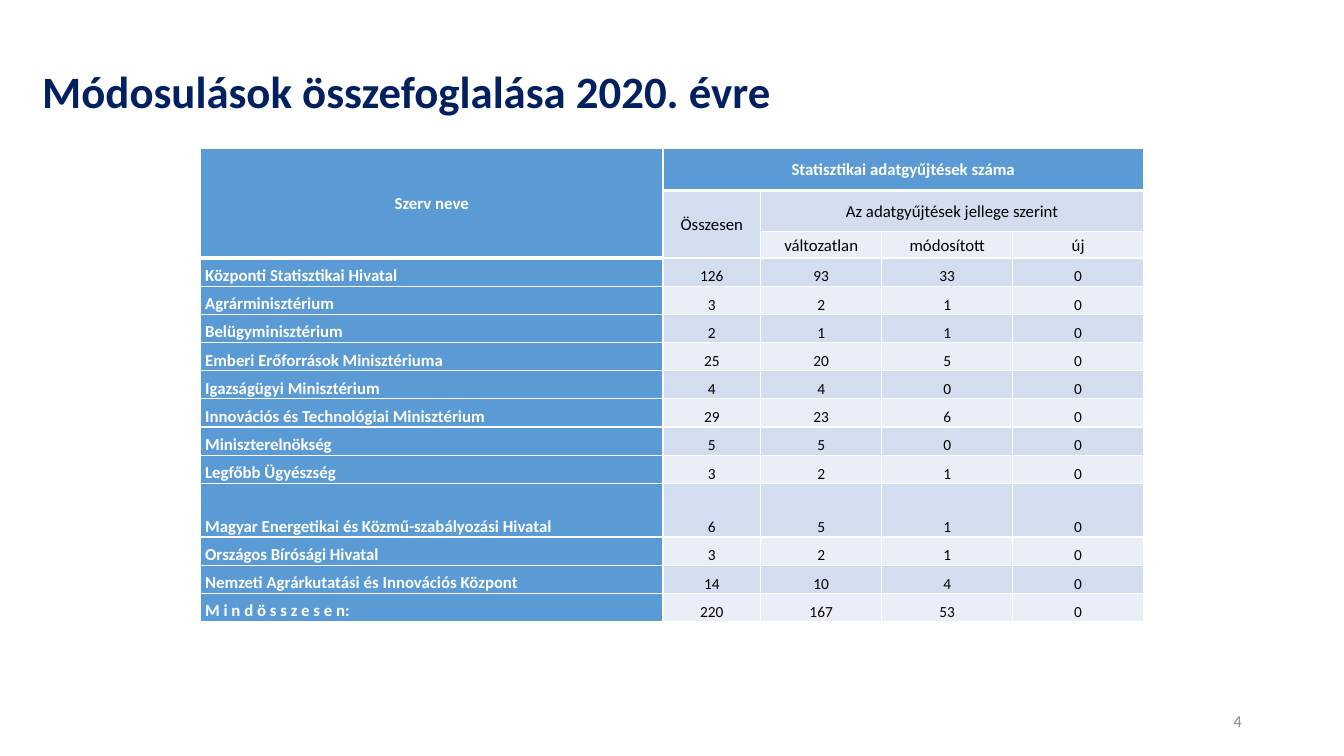
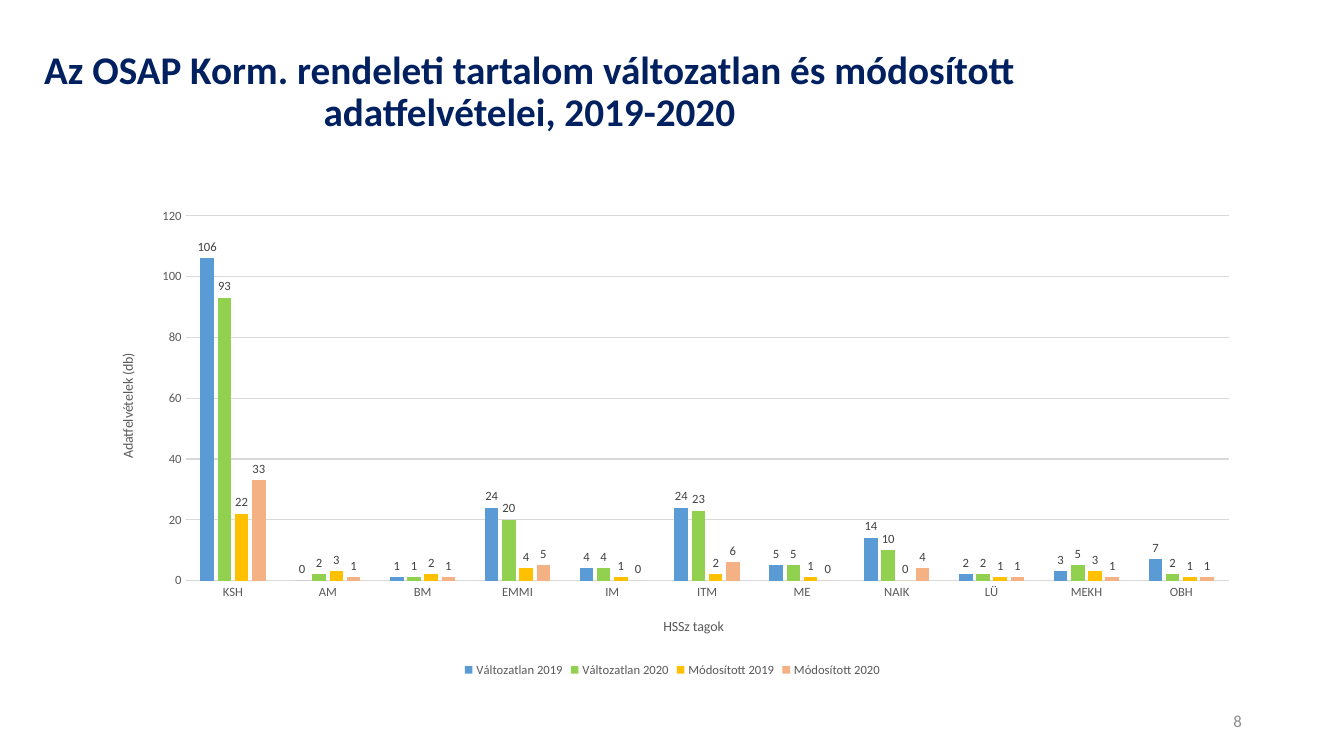
from typing import NamedTuple

from lxml import etree
from pptx import Presentation
from pptx.chart.data import CategoryChartData
from pptx.dml.color import RGBColor
from pptx.enum.chart import XL_CHART_TYPE, XL_LABEL_POSITION, XL_LEGEND_POSITION, XL_TICK_MARK
from pptx.enum.text import MSO_ANCHOR, MSO_AUTO_SIZE, PP_ALIGN
from pptx.oxml.ns import qn
from pptx.util import Cm, Pt

LEFT, CENTER, RIGHT = PP_ALIGN.LEFT, PP_ALIGN.CENTER, PP_ALIGN.RIGHT
MIDDLE, BOTTOM = MSO_ANCHOR.MIDDLE, MSO_ANCHOR.BOTTOM
NO_AUTOFIT = MSO_AUTO_SIZE.NONE
CLUSTERED = XL_CHART_TYPE.COLUMN_CLUSTERED
OUTSIDE_END = XL_LABEL_POSITION.OUTSIDE_END
LEGEND_BOTTOM = XL_LEGEND_POSITION.BOTTOM
NO_TICK = XL_TICK_MARK.NONE

FONT = "Calibri"
NAVY, WHITE, BLACK = "002060", "FFFFFF", "000000"
BLUE, BAND_DARK, BAND_LIGHT = "5B9BD5", "D2DEEF", "EAEFF7"
NUMBER_GREY, AXIS_GREY, LABEL_GREY, GRID_GREY = "8C8C8C", "595959", "404040", "D9D9D9"
TITLE_ONLY = 5


class Box(NamedTuple):
    """Left, top, width and height in centimetres."""
    left: float
    top: float
    width: float
    height: float

    def lengths(self):
        return [Cm(value) for value in self]


class HeaderCell(NamedTuple):
    row: int
    column: int
    text: str
    rows: int = 1
    columns: int = 1
    fill: str = BAND_DARK


class BodyRow(NamedTuple):
    organisation: str
    counts: tuple[int, int, int, int]
    height: float = 0.71


class Series(NamedTuple):
    name: str
    values: tuple[int, ...]
    color: str


NUMBER_BOX = Box(23.93, 17.65, 7.62, 1.02)
TABLE_LEFT, TABLE_TOP = 5.05, 3.73
COLUMN_WIDTHS = (11.66, 2.46, 3.05, 3.3, 3.3)
HEADER_HEIGHTS = (1.07, 1.04, 0.66)

HEADER = (
    HeaderCell(0, 0, "Szerv neve", rows=3, fill=BLUE),
    HeaderCell(0, 1, "Statisztikai adatgyűjtések száma", columns=4, fill=BLUE),
    HeaderCell(1, 1, "Összesen", rows=2),
    HeaderCell(1, 2, "Az adatgyűjtések jellege szerint", columns=3),
    HeaderCell(2, 2, "változatlan", fill=BAND_LIGHT),
    HeaderCell(2, 3, "módosított", fill=BAND_LIGHT),
    HeaderCell(2, 4, "új", fill=BAND_LIGHT),
)
BODY = (
    BodyRow("Központi Statisztikai Hivatal", (126, 93, 33, 0)),
    BodyRow("Agrárminisztérium", (3, 2, 1, 0)),
    BodyRow("Belügyminisztérium", (2, 1, 1, 0)),
    BodyRow("Emberi Erőforrások Minisztériuma", (25, 20, 5, 0)),
    BodyRow("Igazságügyi Minisztérium", (4, 4, 0, 0)),
    BodyRow("Innovációs és Technológiai Minisztérium", (29, 23, 6, 0)),
    BodyRow("Miniszterelnökség", (5, 5, 0, 0)),
    BodyRow("Legfőbb Ügyészség", (3, 2, 1, 0)),
    BodyRow("Magyar Energetikai és Közmű-szabályozási Hivatal", (6, 5, 1, 0), 1.35),
    BodyRow("Országos Bírósági Hivatal", (3, 2, 1, 0)),
    BodyRow("Nemzeti Agrárkutatási és Innovációs Központ", (14, 10, 4, 0)),
    BodyRow("M i n d ö s s z e s e n:", (220, 167, 53, 0)),
)

MEMBERS = ("KSH", "AM", "BM", "EMMI", "IM", "ITM", "ME", "NAIK", "LÜ", "MEKH", "OBH")
SURVEYS = (
    Series("Változatlan 2019", (106, 0, 1, 24, 4, 24, 5, 14, 2, 3, 7), BLUE),
    Series("Változatlan 2020", (93, 2, 1, 20, 4, 23, 5, 10, 2, 5, 2), "92D050"),
    Series("Módosított 2019", (22, 3, 2, 4, 1, 2, 1, 0, 1, 3, 1), "FFC000"),
    Series("Módosított 2020", (33, 1, 1, 5, 0, 6, 0, 4, 1, 1, 1), "F4B183"),
)


def rgb(color: str) -> RGBColor:
    return RGBColor.from_string(color)


def set_font(font, size: float, color: str, bold: bool = False) -> None:
    font.name, font.size, font.bold = FONT, Pt(size), bold
    font.color.rgb = rgb(color)


def add_titled_slide(prs, title: str, box: Box, size: float, align, number: int):
    slide = prs.slides.add_slide(prs.slide_layouts[TITLE_ONLY])
    heading = slide.shapes.title
    heading.left, heading.top, heading.width, heading.height = box.lengths()
    number_box = slide.shapes.add_textbox(*NUMBER_BOX.lengths())
    for shape, text, alignment in ((heading, title, align), (number_box, str(number), RIGHT)):
        frame = shape.text_frame
        frame.text = text
        frame.word_wrap = True
        frame.auto_size = NO_AUTOFIT
        frame.vertical_anchor = MIDDLE
        frame.paragraphs[0].alignment = alignment
    heading_line = heading.text_frame.paragraphs[0]
    heading_line.line_spacing = 0.9
    set_font(heading_line.font, size, NAVY, bold=True)
    set_font(number_box.text_frame.paragraphs[0].font, 12, NUMBER_GREY)
    return slide


def add_borders(cell, bottom: float) -> None:
    """White lines of 1 pt, with the bottom one in its own width."""
    properties = cell._tc.get_or_add_tcPr()
    for side, width in (("L", 1), ("R", 1), ("T", 1), ("B", bottom)):
        line = etree.SubElement(properties, qn(f"a:ln{side}"), w=str(Pt(width)))
        fill = etree.SubElement(line, qn("a:solidFill"))
        etree.SubElement(fill, qn("a:srgbClr"), val=WHITE)


def style_cell(cell, text: str, fill: str, size: float = 12, align=CENTER,
               anchor=MIDDLE, bottom: float = 1) -> None:
    """Blue cells carry bold white text, all others plain black text."""
    on_blue = fill == BLUE
    add_borders(cell, bottom)
    cell.fill.solid()
    cell.fill.fore_color.rgb = rgb(fill)
    cell.margin_left = cell.margin_right = Cm(0.12)
    cell.margin_top = cell.margin_bottom = 0
    cell.vertical_anchor = anchor
    cell.text = text
    paragraph = cell.text_frame.paragraphs[0]
    paragraph.alignment = align
    paragraph.line_spacing = 1.07
    set_font(paragraph.font, size, WHITE if on_blue else BLACK, bold=on_blue)


def add_summary_table(slide) -> None:
    heights = HEADER_HEIGHTS + tuple(row.height for row in BODY)
    box = Box(TABLE_LEFT, TABLE_TOP, sum(COLUMN_WIDTHS), sum(heights))
    table = slide.shapes.add_table(len(heights), len(COLUMN_WIDTHS), *box.lengths()).table
    table.first_col = True
    for column, width in zip(table.columns, COLUMN_WIDTHS):
        column.width = Cm(width)
    for row, height in zip(table.rows, heights):
        row.height = Cm(height)

    for item in HEADER:
        last_row, last_column = item.row + item.rows - 1, item.column + item.columns - 1
        origin = table.cell(item.row, item.column)
        if item.rows * item.columns > 1:
            origin.merge(table.cell(last_row, last_column))
        for row in range(item.row, last_row + 1):
            for column in range(item.column, last_column + 1):
                is_origin = (row, column) == (item.row, item.column)
                style_cell(table.cell(row, column), item.text if is_origin else "",
                           item.fill, bottom=3 if item.fill == BLUE else 1)

    for index, entry in enumerate(BODY):
        row = index + len(HEADER_HEIGHTS)
        style_cell(table.cell(row, 0), entry.organisation, BLUE, align=LEFT, anchor=BOTTOM)
        band = BAND_LIGHT if index % 2 else BAND_DARK
        for column, count in enumerate(entry.counts, start=1):
            style_cell(table.cell(row, column), str(count), band, size=11, anchor=BOTTOM)


def place(element, index: int, inner: bool = False, **fractions: float) -> None:
    """Fix a chart part at fractions of the chart area; index is its layout's place."""
    for old in element.findall(qn("c:layout")):
        element.remove(old)
    layout = etree.Element(qn("c:layout"))
    manual = etree.SubElement(layout, qn("c:manualLayout"))
    if inner:
        etree.SubElement(manual, qn("c:layoutTarget"), val="inner")
    for mode in ("xMode", "yMode"):
        etree.SubElement(manual, qn(f"c:{mode}"), val="edge")
    for key, value in fractions.items():
        etree.SubElement(manual, qn(f"c:{key}"), val=str(value))
    element.insert(index, layout)


def style_axis(axis, title: str, x: float, y: float) -> None:
    axis.major_tick_mark = axis.minor_tick_mark = NO_TICK
    set_font(axis.tick_labels.font, 9, AXIS_GREY)
    frame = axis.axis_title.text_frame
    frame.text = title
    set_font(frame.paragraphs[0].font, 10, AXIS_GREY)
    place(axis.axis_title.element, 1, x=x, y=y)


def style_grey_line(line) -> None:
    line.color.rgb = rgb(GRID_GREY)
    line.width = Pt(0.75)


def add_survey_chart(slide) -> None:
    data = CategoryChartData(number_format="0")
    data.categories = MEMBERS
    for survey in SURVEYS:
        data.add_series(survey.name, survey.values)
    box = Box(2.34, 5.08, 29.21, 12.09)
    chart = slide.shapes.add_chart(CLUSTERED, *box.lengths(), data).chart
    set_font(chart.font, 10, BLACK)
    chart.has_title = False
    chart.has_legend = True
    chart.legend.position = LEGEND_BOTTOM
    chart.legend.include_in_layout = False
    set_font(chart.legend.font, 9, AXIS_GREY)

    plot = chart.plots[0]
    plot.vary_by_categories = False
    plot.gap_width, plot.overlap = 219, -27
    for series, survey in zip(plot.series, SURVEYS):
        series.format.fill.solid()
        series.format.fill.fore_color.rgb = rgb(survey.color)
        labels = series.data_labels
        labels.show_value = True
        labels.position = OUTSIDE_END
        set_font(labels.font, 9, LABEL_GREY)

    members, counts = chart.category_axis, chart.value_axis
    style_axis(members, "HSSz tagok", x=0.49, y=0.86)
    style_axis(counts, "Adatfelvételek (db)", x=0.02, y=0.31)
    style_grey_line(members.format.line)
    counts.format.line.fill.background()
    counts.minimum_scale, counts.maximum_scale, counts.major_unit = 0, 120, 20
    counts.has_major_gridlines = True
    style_grey_line(counts.major_gridlines.format.line)
    plot_area = chart.element.find(f"{qn('c:chart')}/{qn('c:plotArea')}")
    place(plot_area, 0, inner=True, x=0.08, y=0.03, w=0.9, h=0.76)


def main() -> None:
    prs = Presentation()
    prs.slide_width, prs.slide_height = Cm(33.87), Cm(19.05)
    summary = add_titled_slide(prs, "Módosulások összefoglalása 2020. évre",
                               Box(0.81, 0.53, 31.72, 3.68), 32, LEFT, 4)
    add_summary_table(summary)
    comparison = add_titled_slide(
        prs, "Az OSAP Korm. rendeleti tartalom változatlan és módosított adatfelvételei, 2019-2020",
        Box(0.41, 0.89, 25.86, 2.9), 28, CENTER, 8)
    add_survey_chart(comparison)
    prs.save("out.pptx")


if __name__ == "__main__":
    main()
